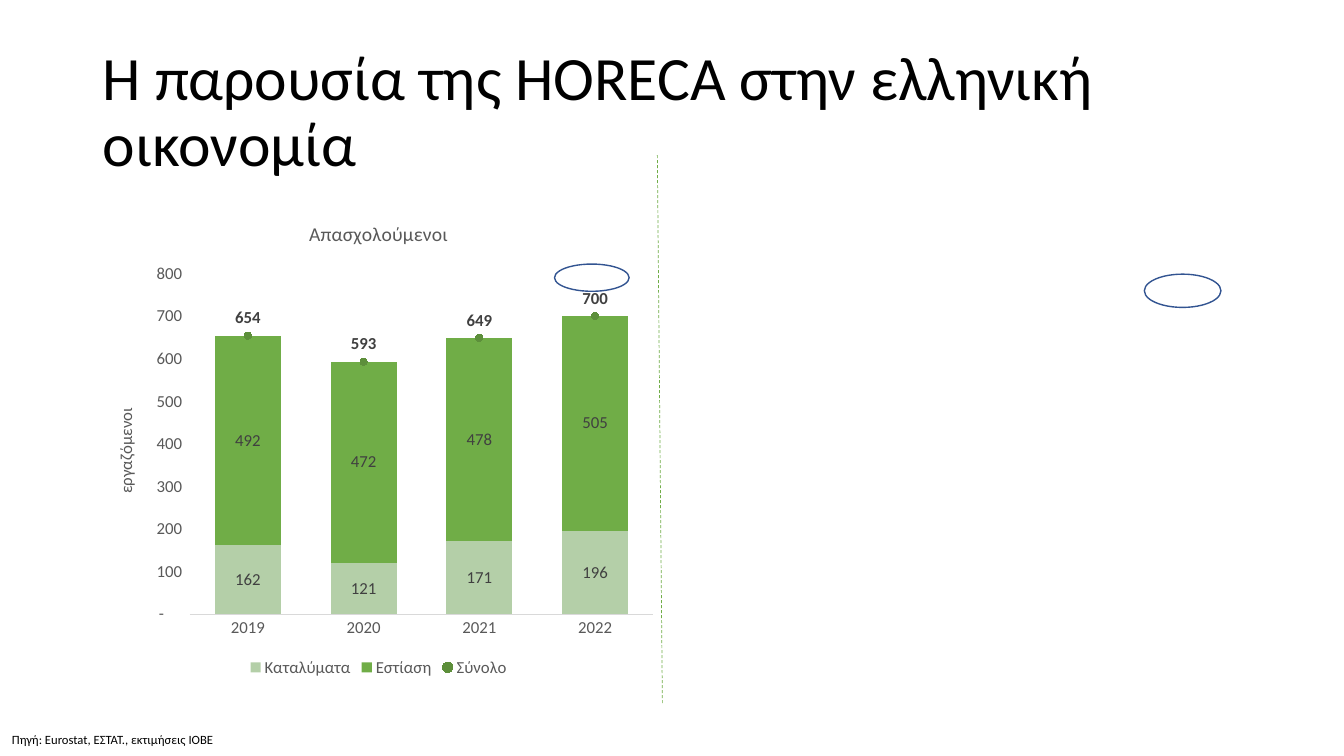
from pptx import Presentation
from pptx.chart.data import CategoryChartData
from pptx.dml.color import RGBColor
from pptx.enum.chart import (XL_CHART_TYPE, XL_LABEL_POSITION, XL_LEGEND_POSITION,
                             XL_MARKER_STYLE, XL_TICK_MARK)
from pptx.enum.dml import MSO_LINE
from pptx.enum.shapes import MSO_CONNECTOR, MSO_SHAPE
from pptx.enum.text import MSO_ANCHOR, PP_ALIGN
from pptx.oxml import parse_xml
from pptx.oxml.ns import nsdecls
from pptx.util import Pt
from lxml.etree import SubElement

EMU_PER_PX = 9144  # 100 px to the inch
FONT = "Calibri"
BLACK, GREY, DARK_GREY, AXIS_GREY = "000000", "595959", "404040", "D9D9D9"
PALE_GREEN, GREEN, DEEP_GREEN, BLUE = "B4CFA8", "70AD47", "5D8F3B", "325491"

YEARS = ["2019", "2020", "2021", "2022"]
LODGING = [162, 121, 171, 196]
CATERING = [492, 472, 478, 505]
TOTAL = [654, 593, 649, 700]


def px(*lengths):
    return [length * EMU_PER_PX for length in lengths]


def rgb(value):
    return RGBColor.from_string(value)


def style_font(font, size, color, bold=False):
    font.name, font.size, font.bold = FONT, Pt(size), bold
    font.color.rgb = rgb(color)


def fill_solid(part, color):
    part.fill.solid()
    part.fill.fore_color.rgb = rgb(color)


def add_title(slide, box):
    title = slide.shapes.title
    title.left, title.top, title.width, title.height = px(*box)
    frame = title.text_frame
    frame.text = "Η παρουσία της HORECA στην ελληνική οικονομία"
    frame.vertical_anchor = MSO_ANCHOR.MIDDLE
    heading = frame.paragraphs[0]
    heading.alignment = PP_ALIGN.LEFT
    heading.line_spacing = 0.9
    style_font(heading.font, 44, BLACK)


def add_source_note(slide, box):
    frame = slide.shapes.add_textbox(*px(*box)).text_frame
    frame.word_wrap = True
    frame.text = "Πηγή: Eurostat, ΕΣΤΑΤ., εκτιμήσεις ΙΟΒΕ"
    style_font(frame.paragraphs[0].font, 9, BLACK)


def move_last_series_to_line(chart):
    """Turn the last column series into a line plot on the same axes."""
    columns = chart.element.xpath(".//c:barChart")[0]
    total = columns.xpath("c:ser")[-1]
    for flag in total.xpath("c:invertIfNegative"):
        total.remove(flag)
    line_plot = parse_xml(
        f'<c:lineChart {nsdecls("c")}><c:grouping val="standard"/>'
        '<c:varyColors val="0"/><c:marker val="1"/></c:lineChart>')
    line_plot.insert(2, total)
    for axis_id in columns.xpath("c:axId"):
        SubElement(line_plot, axis_id.tag, val=axis_id.get("val"))
    columns.addnext(line_plot)


def set_plot_area(chart, **fractions):
    """Fix the inner plot area as fractions of the chart box."""
    plot_area = chart.element.xpath(".//c:plotArea")[0]
    for layout in plot_area.xpath("c:layout"):
        plot_area.remove(layout)
    places = "".join(f'<c:{key} val="{value}"/>' for key, value in fractions.items())
    plot_area.insert(0, parse_xml(
        f'<c:layout {nsdecls("c")}><c:manualLayout><c:layoutTarget val="inner"/>'
        f'<c:xMode val="edge"/><c:yMode val="edge"/>{places}'
        '</c:manualLayout></c:layout>'))


def label_series(series, position, bold=False):
    labels = series.data_labels
    labels.show_value = True
    labels.number_format, labels.number_format_is_linked = "#,##0", False
    labels.position = position
    style_font(labels.font, 12, DARK_GREY, bold)


def style_axes(chart):
    years, workers = chart.category_axis, chart.value_axis
    for axis in (years, workers):
        axis.major_tick_mark = axis.minor_tick_mark = XL_TICK_MARK.NONE
        axis.has_major_gridlines = False
        style_font(axis.tick_labels.font, 12, GREY)
    years.format.line.color.rgb = rgb(AXIS_GREY)
    years.format.line.width = Pt(0.75)
    workers.format.line.fill.background()
    workers.minimum_scale, workers.maximum_scale, workers.major_unit = 0, 800, 100
    workers.tick_labels.number_format = '_-* #,##0_-;\\-* #,##0_-;_-* "-"??_-;_-@_'
    workers.tick_labels.number_format_is_linked = False
    caption = workers.axis_title.text_frame
    caption.text = "εργαζόμενοι"
    style_font(caption.paragraphs[0].font, 12, GREY)


def add_employment_chart(slide, box):
    employment = CategoryChartData(number_format="#,##0")
    employment.categories = YEARS
    employment.add_series("Καταλύματα", LODGING)
    employment.add_series("Εστίαση", CATERING)
    employment.add_series("Σύνολο", TOTAL)
    chart = slide.shapes.add_chart(
        XL_CHART_TYPE.COLUMN_STACKED, *px(*box), employment).chart
    move_last_series_to_line(chart)
    set_plot_area(chart, x=0.17, y=0.15, w=0.81, h=0.71)
    style_font(chart.font, 12, BLACK)

    chart.has_title = True
    heading = chart.chart_title.text_frame
    heading.text = "Απασχολούμενοι"
    style_font(heading.paragraphs[0].font, 14, GREY)
    chart.chart_title.include_in_layout = False
    chart.has_legend = True
    chart.legend.position = XL_LEGEND_POSITION.BOTTOM
    chart.legend.include_in_layout = False
    style_font(chart.legend.font, 12, GREY)
    style_axes(chart)

    columns, totals = chart.plots
    columns.gap_width, columns.overlap = 75, 100
    columns.vary_by_categories = False
    for sector, color in zip(columns.series, (PALE_GREEN, GREEN)):
        fill_solid(sector.format, color)
        label_series(sector, XL_LABEL_POSITION.CENTER)
    total = totals.series[0]
    total.smooth = False
    total.format.line.fill.background()
    total.marker.style, total.marker.size = XL_MARKER_STYLE.CIRCLE, 5
    fill_solid(total.marker.format, DEEP_GREEN)
    total.marker.format.line.color.rgb = rgb(DEEP_GREEN)
    label_series(total, XL_LABEL_POSITION.ABOVE, bold=True)


def add_highlight_ring(slide, box):
    ring = slide.shapes.add_shape(MSO_SHAPE.OVAL, *px(*box))
    ring.shadow.inherit = False
    ring.fill.background()
    ring.line.color.rgb = rgb(BLUE)
    ring.line.width = Pt(1)


def add_divider(slide, ends):
    divider = slide.shapes.add_connector(MSO_CONNECTOR.STRAIGHT, *px(*ends))
    divider.line.color.rgb = rgb(GREEN)
    divider.line.width = Pt(0.5)
    divider.line.dash_style = MSO_LINE.DASH
    divider.element.spPr.append(parse_xml(f'<a:effectLst {nsdecls("a")}/>'))


def main():
    deck = Presentation()
    deck.slide_width, deck.slide_height = px(1333, 750)
    slide = deck.slides.add_slide(deck.slide_layouts[5])
    add_title(slide, (92, 40, 1150, 145))
    add_source_note(slide, (2, 721, 622, 25))
    add_employment_chart(slide, (92, 200, 567, 476))
    for box in ((550, 262, 74, 27), (1135, 272, 76, 33)):
        add_highlight_ring(slide, box)
    add_divider(slide, (652, 154, 657, 698))
    deck.save("out.pptx")


if __name__ == "__main__":
    main()
